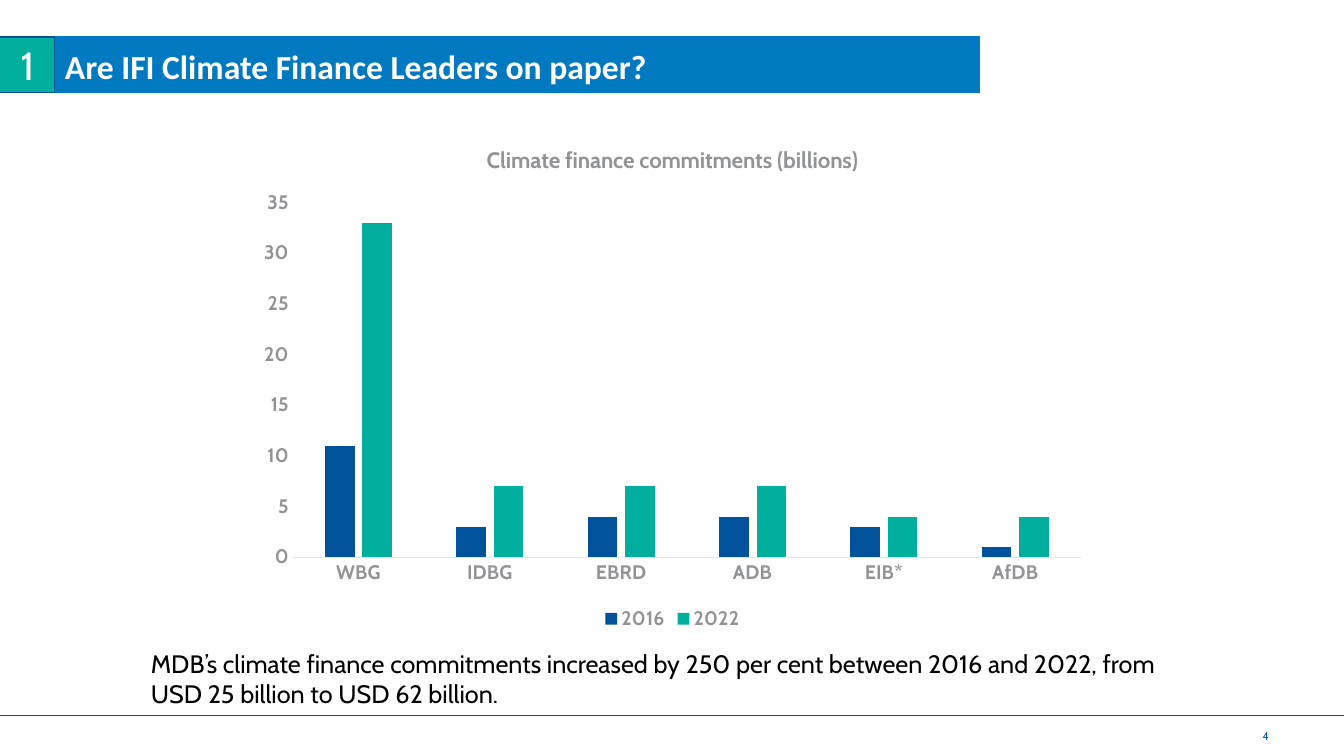
"""Builds a slide on the climate finance commitments of development banks."""
from lxml import etree
from pptx import Presentation
from pptx.chart.data import CategoryChartData
from pptx.dml.color import RGBColor
from pptx.enum.chart import XL_CHART_TYPE, XL_LEGEND_POSITION, XL_TICK_MARK
from pptx.enum.shapes import MSO_CONNECTOR, MSO_SHAPE
from pptx.enum.text import MSO_ANCHOR, PP_ALIGN
from pptx.oxml.ns import qn
from pptx.util import Emu, Pt

COLUMNS = XL_CHART_TYPE.COLUMN_CLUSTERED
BOTTOM = XL_LEGEND_POSITION.BOTTOM
NO_TICK = XL_TICK_MARK.NONE
STRAIGHT = MSO_CONNECTOR.STRAIGHT
RECTANGLE = MSO_SHAPE.RECTANGLE
TOP, MIDDLE = MSO_ANCHOR.TOP, MSO_ANCHOR.MIDDLE
LEFT, CENTER, RIGHT = PP_ALIGN.LEFT, PP_ALIGN.CENTER, PP_ALIGN.RIGHT

PX = 914400 / 100.8
NAVY, TEAL, BLUE, RULE = "00539B", "00AE9E", "0079C1", "005198"
GRAY, PALE, WHITE, BLACK = "929395", "E6E6E7", "FFFFFF", "000000"

rgb = RGBColor.from_string


def px(*lengths):
    return [Emu(round(length * PX)) for length in lengths]


def add_text(text, box, size, color, font="Cabin", bold=False, align=LEFT,
             anchor=TOP, fill=None, line=None, inset=None, spacing=None, after=None):
    if fill:
        holder = slide.shapes.add_shape(RECTANGLE, *px(*box))
        holder.shadow.inherit = False
        holder.fill.solid()
        holder.fill.fore_color.rgb = rgb(fill)
        holder.line.color.rgb = rgb(line)
        holder.line.width = Pt(0.75)
    else:
        holder = slide.shapes.add_textbox(*px(*box))
    frame = holder.text_frame
    frame.word_wrap = True
    frame.vertical_anchor = anchor
    if inset is not None:
        frame.margin_left = frame.margin_right = inset
        frame.margin_top = frame.margin_bottom = inset
    paragraph = frame.paragraphs[0]
    paragraph.alignment = align
    paragraph.line_spacing = spacing
    paragraph.space_after = after
    run = paragraph.add_run()
    run.text = text
    run.font.name = font
    run.font.size = Pt(size)
    run.font.bold = bold
    run.font.color.rgb = rgb(color)


prs = Presentation()
prs.slide_width, prs.slide_height = px(1344, 756)
slide = prs.slides.add_slide(prs.slide_layouts[6])

footer_rule = slide.shapes.add_connector(STRAIGHT, *px(0, 715, 1344, 715))
footer_rule.line.color.rgb = rgb(RULE)
footer_rule.line.width = Pt(0.25)
etree.SubElement(footer_rule._element.spPr, qn("a:effectLst"))
add_text("4", (1217, 715, 52, 41), 8, NAVY, align=RIGHT, anchor=MIDDLE, inset=0)

add_text("Are IFI Climate Finance Leaders on paper?", (55, 37, 925, 56), 24, WHITE,
         font="Calibri", bold=True, fill=BLUE, line=BLUE, spacing=1.1)

commitments = CategoryChartData()
commitments.categories = ["WBG", "IDBG", "EBRD", "ADB", "EIB*", "AfDB"]
commitments.add_series("2016", (11, 3, 4, 4, 3, 1))
commitments.add_series("2022", (33, 7, 7, 7, 4, 4))
chart = slide.shapes.add_chart(COLUMNS, *px(247, 125, 851, 510), commitments).chart

chart.has_title = True
chart.chart_title.include_in_layout = False
heading = chart.chart_title.text_frame
heading.text = "Climate finance commitments (billions)"
chart.has_legend = True
chart.legend.position = BOTTOM
chart.legend.include_in_layout = False

banks, billions = chart.category_axis, chart.value_axis
billions.minimum_scale, billions.maximum_scale, billions.major_unit = 0, 35, 5
billions.has_major_gridlines = False
for axis in (banks, billions):
    axis.major_tick_mark = axis.minor_tick_mark = NO_TICK
banks.format.line.color.rgb = rgb(PALE)
banks.format.line.width = Pt(0.75)
billions.format.line.fill.background()

heading_font = heading.paragraphs[0].runs[0].font
for font, size in ((chart.font, 14), (banks.tick_labels.font, 14),
                   (billions.tick_labels.font, 14), (chart.legend.font, 14),
                   (heading_font, 16)):
    font.name = "Cabin"
    font.size = Pt(size)
    font.bold = True
    font.color.rgb = rgb(GRAY)

columns = chart.plots[0]
columns.vary_by_categories = False
columns.gap_width, columns.overlap = 219, -27
for year, color in zip(columns.series, (NAVY, TEAL)):
    year.format.fill.solid()
    year.format.fill.fore_color.rgb = rgb(color)

add_text("MDB’s climate finance commitments increased by 250 per cent between "
         "2016 and 2022, from USD 25 billion to USD 62 billion.",
         (141, 643, 1061, 72), 18, BLACK)
add_text("1", (0, 37, 55, 56), 28, WHITE, align=CENTER, anchor=MIDDLE,
         fill=TEAL, line=RULE, after=Pt(6))

prs.save("out.pptx")
